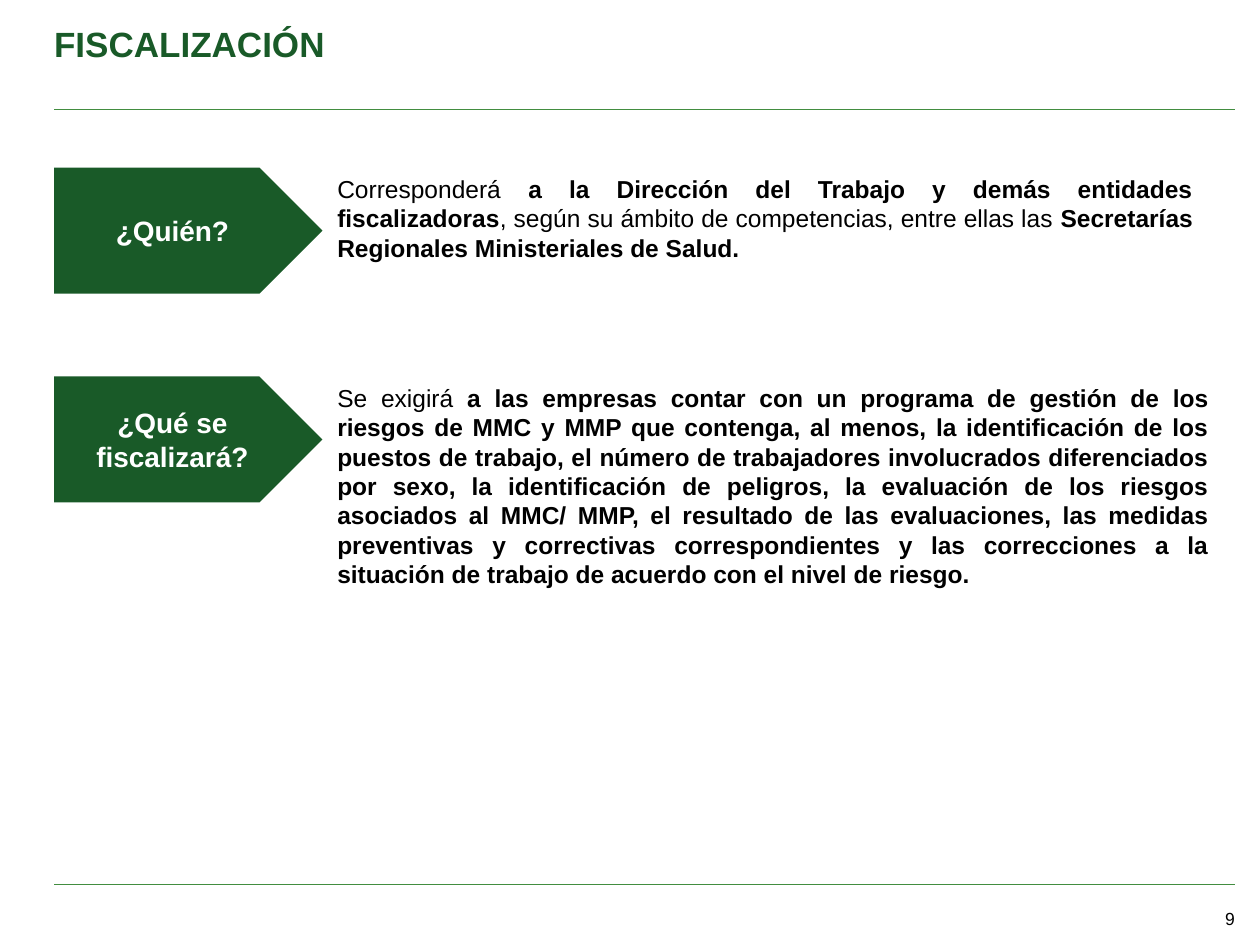
from dataclasses import dataclass

from lxml import etree
from pptx import Presentation
from pptx.dml.color import RGBColor
from pptx.enum.shapes import MSO_CONNECTOR, MSO_SHAPE
from pptx.enum.text import MSO_ANCHOR, PP_ALIGN
from pptx.oxml.ns import qn
from pptx.util import Cm, Pt

LEFT, RIGHT = PP_ALIGN.LEFT, PP_ALIGN.RIGHT
CENTER, JUSTIFY = PP_ALIGN.CENTER, PP_ALIGN.JUSTIFY
TOP, MIDDLE, BOTTOM = MSO_ANCHOR.TOP, MSO_ANCHOR.MIDDLE, MSO_ANCHOR.BOTTOM
ARROW = MSO_SHAPE.PENTAGON
STRAIGHT = MSO_CONNECTOR.STRAIGHT


@dataclass(frozen=True)
class Theme:
    font: str = "Arial"
    dark: RGBColor = RGBColor(0x19, 0x5A, 0x28)
    rule: RGBColor = RGBColor(0x42, 0x8D, 0x40)
    ink: RGBColor = RGBColor(0, 0, 0)
    white: RGBColor = RGBColor(255, 255, 255)
    title: int = 20
    label: int = 16
    body: int = 14
    page: int = 10


THEME = Theme()
EDGE, WIDTH = 1.09, 23.8

ROWS = [
    (3.38, 17.75, "¿Quién?", [
        ("Corresponderá ", False),
        ("a la Dirección del Trabajo y demás entidades fiscalizadoras", True),
        (", según su ámbito de competencias, entre ellas las ", False),
        ("Secretarías Regionales Ministeriales de Salud.", True),
    ]),
    (7.59, 18.08, "¿Qué se fiscalizará?", [
        ("Se exigirá ", False),
        ("a las empresas contar con un programa de gestión de los riesgos de "
         "MMC y MMP que contenga, al menos, la identificación de los puestos "
         "de trabajo, el número de trabajadores involucrados diferenciados "
         "por sexo, la identificación de peligros, la evaluación de los "
         "riesgos asociados al MMC/ MMP, el resultado de las evaluaciones, "
         "las medidas preventivas y correctivas correspondientes y las "
         "correcciones a la situación de trabajo de acuerdo con el nivel de "
         "riesgo.", True),
    ]),
]


def place(shape, left, top, width, height):
    shape.left, shape.top = Cm(left), Cm(top)
    shape.width, shape.height = Cm(width), Cm(height)


def write(shape, runs, size, color, align, anchor, pad=None):
    frame = shape.text_frame
    frame.word_wrap = True
    frame.vertical_anchor = anchor
    if pad is not None:
        frame.margin_left = frame.margin_right = Cm(pad)
        frame.margin_top = frame.margin_bottom = Cm(pad)
    para = frame.paragraphs[0]
    para.alignment = align
    para.font.name = THEME.font
    para.font.size = Pt(size)
    para.font.color.rgb = color
    for text, bold in runs:
        run = para.add_run()
        run.text = text
        run.font.bold = bold


def add_rule(slide, left, top, width):
    line = slide.shapes.add_connector(
        STRAIGHT, Cm(left), Cm(top), Cm(left + width), Cm(top))
    line.line.color.rgb = THEME.rule
    line.line.width = Pt(0.75)
    etree.SubElement(line._element.spPr, qn("a:effectLst"))


def add_head(slide, left, top, width):
    title = slide.shapes.title
    place(title, left, top, width, 0.86)
    write(title, [("FISCALIZACIÓN", True)], THEME.title, THEME.dark,
          LEFT, TOP, 0)
    add_rule(slide, left, top + 1.75, width)


def add_row(slide, left, top, width, label, runs):
    arrow = slide.shapes.add_shape(
        ARROW, Cm(left), Cm(top), Cm(5.41), Cm(2.54))
    arrow.shadow.inherit = False
    arrow.fill.solid()
    arrow.fill.fore_color.rgb = THEME.dark
    arrow.line.fill.background()
    write(arrow, [(label, True)], THEME.label, THEME.white,
          CENTER, MIDDLE, 0.1)
    body = slide.shapes.add_textbox(
        Cm(left + 5.46), Cm(top), Cm(width), Cm(2.06))
    write(body, runs, THEME.body, THEME.ink, JUSTIFY, TOP)


def add_foot(slide, left, top, width):
    add_rule(slide, left, top, width)
    page = slide.shapes.add_textbox(
        Cm(left + width - 0.89), Cm(top + 0.46), Cm(0.89), Cm(0.43))
    write(page, [("9", False)], THEME.page, THEME.ink, RIGHT, BOTTOM, 0)


def main():
    deck = Presentation()
    deck.slide_width, deck.slide_height = Cm(25.4), Cm(19.05)
    slide = deck.slides.add_slide(deck.slide_layouts[5])
    add_head(slide, EDGE, 0.46, WIDTH)
    for top, width, label, runs in ROWS:
        add_row(slide, EDGE, top, width, label, runs)
    add_foot(slide, EDGE, 17.83, WIDTH)
    deck.save("out.pptx")


if __name__ == "__main__":
    main()
